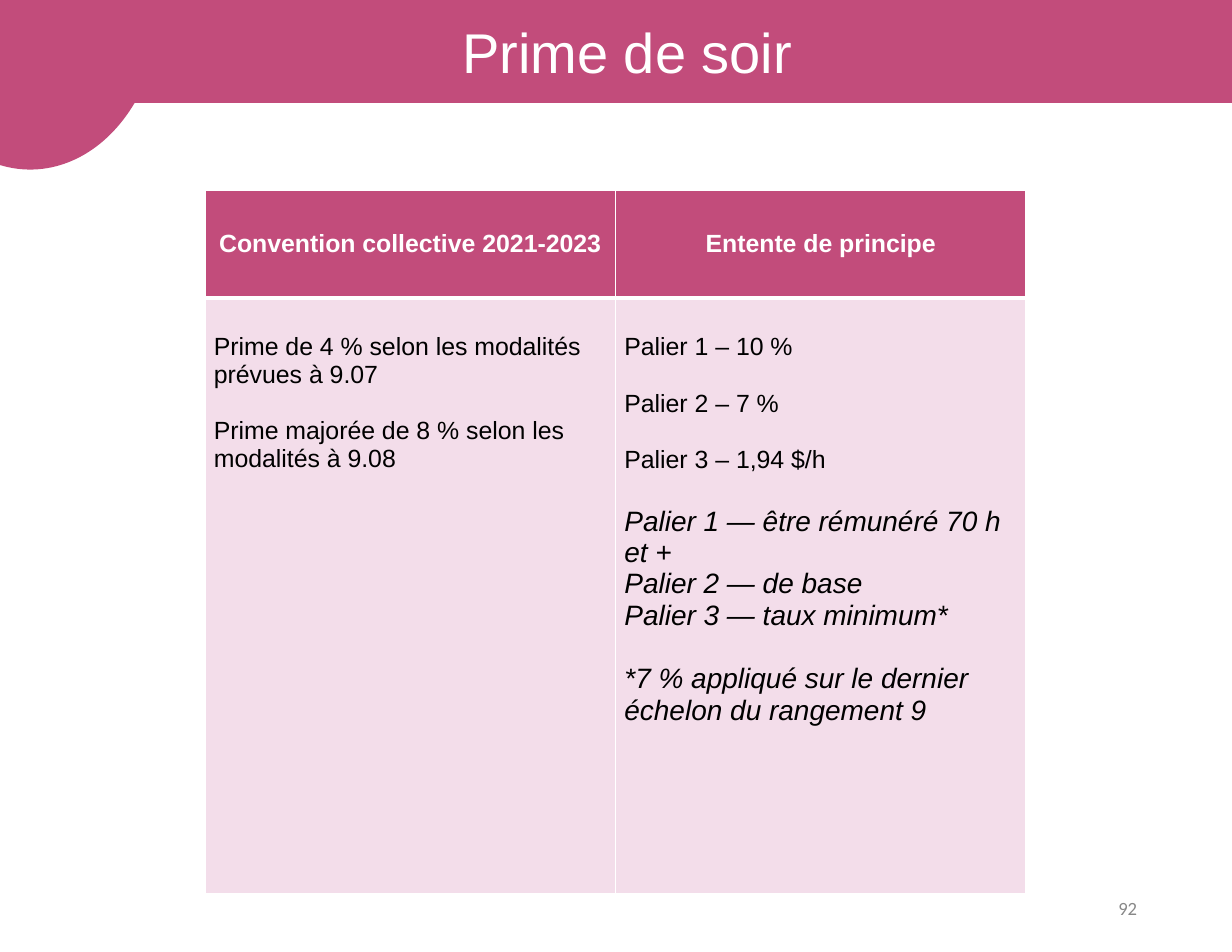
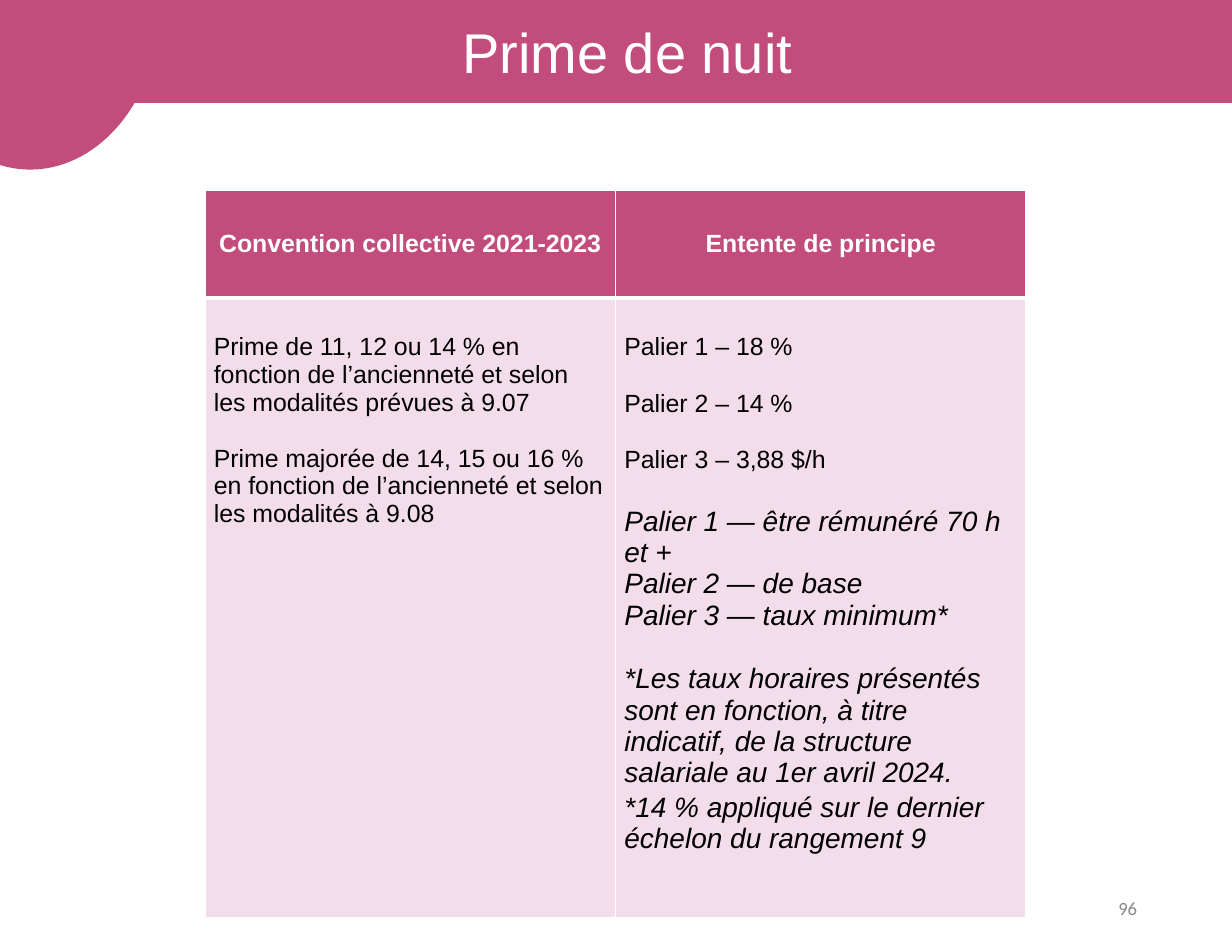
from dataclasses import dataclass
from lxml.etree import SubElement
from pptx import Presentation
from pptx.dml.color import RGBColor as RGB
from pptx.enum.shapes import MSO_SHAPE as SHAPE
from pptx.enum.text import MSO_ANCHOR as ANCHOR, MSO_AUTO_SIZE as AUTO, PP_ALIGN as ALIGN
from pptx.oxml.ns import qn
from pptx.util import Cm, Pt


@dataclass(frozen=True)
class Theme:
    rose: RGB = RGB(0xC2, 0x4C, 0x7B)
    pink: RGB = RGB(0xF3, 0xDD, 0xEA)
    white: RGB = RGB(0xFF, 0xFF, 0xFF)
    black: RGB = RGB(0, 0, 0)
    grey: RGB = RGB(0x88, 0x88, 0x88)
    title: int = 36
    body: int = 16
    note: int = 18
    number: int = 12


T = Theme()

# Text styles: font attributes, colour and alignment
STYLES = {
    "title": (dict(name="Arial", size=Pt(T.title), bold=False), T.white, ALIGN.CENTER),
    "head": (dict(name="Arial", size=Pt(T.body), bold=True), T.white, ALIGN.CENTER),
    "body": (dict(name="Arial", size=Pt(T.body), bold=False), T.black, ALIGN.LEFT),
    "note": (dict(name="Arial", size=Pt(T.note), bold=False, italic=True), T.black, ALIGN.LEFT),
    "number": (dict(name="Calibri", size=Pt(T.number), bold=False), T.grey, ALIGN.RIGHT),
}
BODY_GAP, NOTE_GAP = 18.4, 20.7  # height of one line of each size, in points

# Content: each line is (text, style, space before)
HEADS = ["Convention collective 2021-2023", "Entente de principe"]
LEVELS = [
    ("Palier 1 — être rémunéré 70 h et +", "note", NOTE_GAP),
    ("Palier 2 — de base", "note", 0),
    ("Palier 3 — taux minimum*", "note", 0),
]
SLIDES = [
    dict(
        title="Prime de soir", number="92", body_height=13.51,
        current=["Prime de 4 % selon les modalités prévues à 9.07",
                 "Prime majorée de 8 % selon les modalités à 9.08"],
        rates=["10 %", "7 %", "1,94 $/h"],
        notes=[("*7 % appliqué sur le dernier échelon du rangement 9", "note", NOTE_GAP)],
    ),
    dict(
        title="Prime de nuit", number="96", body_height=14.05,
        current=["Prime de 11, 12 ou 14 % en fonction de l’ancienneté et selon "
                 "les modalités prévues à 9.07",
                 "Prime majorée de 14, 15 ou 16 % en fonction de l’ancienneté et selon "
                 "les modalités à 9.08"],
        rates=["18 %", "14 %", "3,88 $/h"],
        notes=[("*Les taux horaires présentés sont en fonction, à titre indicatif, "
                "de la structure salariale au 1er avril 2024.", "note", NOTE_GAP),
               ("*14 % appliqué sur le dernier échelon du rangement 9", "note", 2)],
    ),
]


def write(tf, lines):
    for i, (text, style, gap) in enumerate(lines):
        font, color, align = STYLES[style]
        p = tf.paragraphs[0] if i == 0 else tf.add_paragraph()
        p.alignment, p.space_before = align, Pt(gap)
        r = p.add_run()
        r.text = text
        for key, value in font.items():
            setattr(r.font, key, value)
        r.font.color.rgb = color


def style_cell(cell, fill, bottom, **layout):
    for key, value in layout.items():
        setattr(cell, key, value)
    tcPr = cell._tc.get_or_add_tcPr()
    for side, width in zip("LRTB", (1, 1, 1, bottom)):
        ln = SubElement(tcPr, qn(f"a:ln{side}"), w=str(Pt(width)))
        SubElement(SubElement(ln, qn("a:solidFill")), qn("a:srgbClr"), val=str(T.white))
    cell.fill.solid()
    cell.fill.fore_color.rgb = fill


prs = Presentation()
prs.slide_width, prs.slide_height = Cm(27.94), Cm(21.59)

for data in SLIDES:
    s = prs.slides.add_slide(prs.slide_layouts[5])

    # Title band
    band = s.shapes.title
    band.left, band.top, band.width, band.height = Cm(0), Cm(0), Cm(28.45), Cm(2.31)
    geom = SubElement(band._element.spPr, qn("a:prstGeom"), prst="roundRect")
    SubElement(geom, qn("a:avLst"))
    tf = band.text_frame
    tf.auto_size, tf.vertical_anchor = AUTO.NONE, ANCHOR.MIDDLE
    write(tf, [(data["title"], "title", 0)])

    # Corner disc
    disc = s.shapes.add_shape(SHAPE.OVAL, Cm(-2.26), Cm(-3.81), Cm(5.89), Cm(7.62))
    disc.shadow.inherit = False
    for sp in (band, disc):
        sp.fill.solid()
        sp.fill.fore_color.rgb = sp.line.color.rgb = T.rose
        sp.line.width = Pt(2)

    # Slide number
    box = s.shapes.add_textbox(Cm(19.74), Cm(20.02), Cm(6.3), Cm(1.14))
    tf = box.text_frame
    tf.word_wrap, tf.vertical_anchor = True, ANCHOR.MIDDLE
    write(tf, [(data["number"], "number", 0)])

    # Comparison table
    heights = [2.44, data["body_height"]]
    table = s.shapes.add_table(2, 2, Cm(4.65), Cm(4.32), Cm(18.62), Cm(sum(heights))).table
    table.horz_banding = False
    for row, height in zip(table.rows, heights):
        row.height = Cm(height)

    current = [(text, "body", BODY_GAP if i else 0) for i, text in enumerate(data["current"])]
    rates = [(f"Palier {i + 1} – {rate}", "body", BODY_GAP if i else 0)
             for i, rate in enumerate(data["rates"])]
    columns = [current, rates + LEVELS + data["notes"]]
    sides = dict(margin_left=Cm(0.2), margin_right=Cm(0.2), margin_bottom=Cm(0.15))
    for c, (head, lines) in enumerate(zip(HEADS, columns)):
        top, body = table.cell(0, c), table.cell(1, c)
        style_cell(top, T.rose, 3, margin_top=Cm(0.15), vertical_anchor=ANCHOR.MIDDLE, **sides)
        style_cell(body, T.pink, 1, margin_top=Cm(0.8), vertical_anchor=ANCHOR.TOP, **sides)
        write(top.text_frame, [(head, "head", 0)])
        write(body.text_frame, lines)

prs.save("out.pptx")
